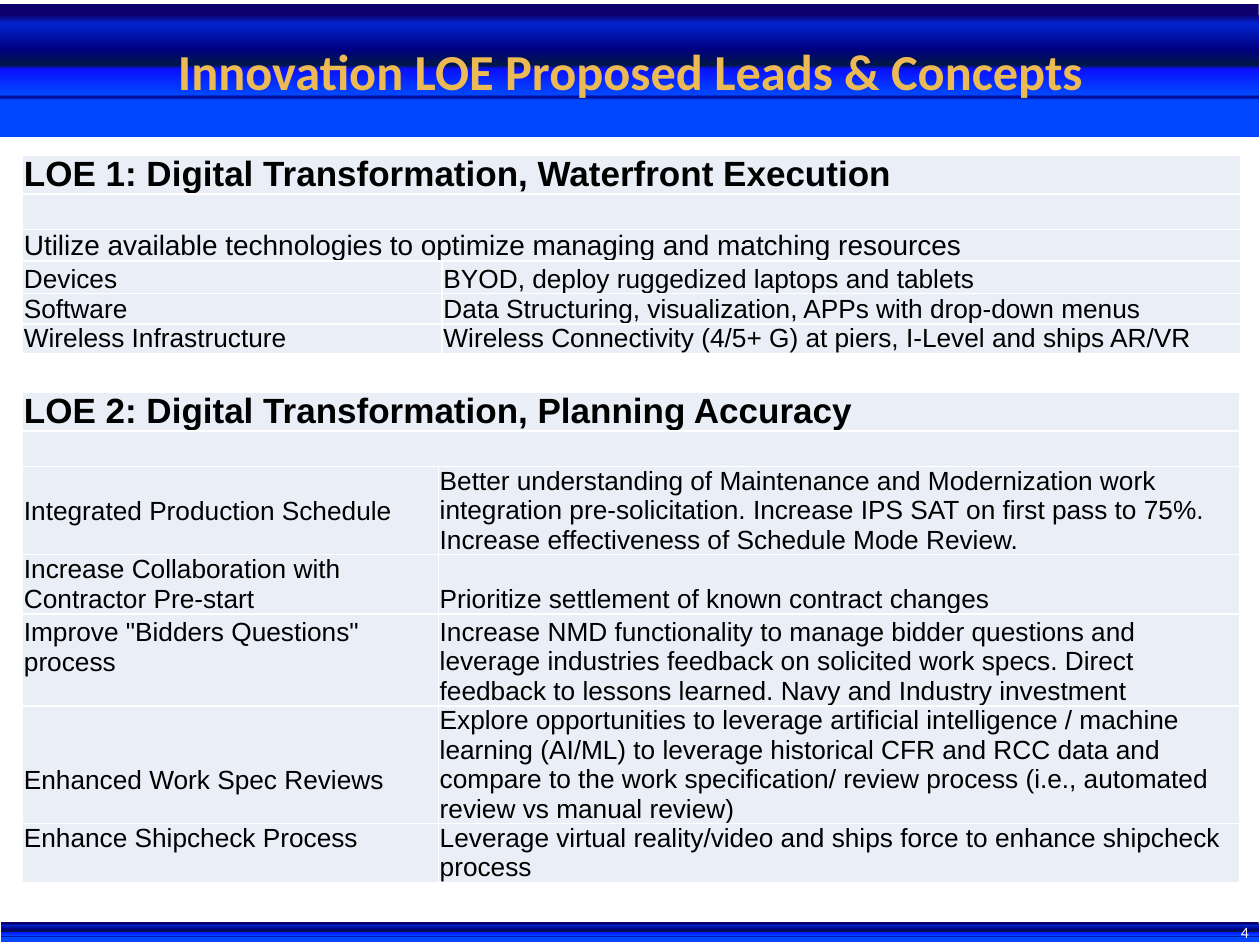
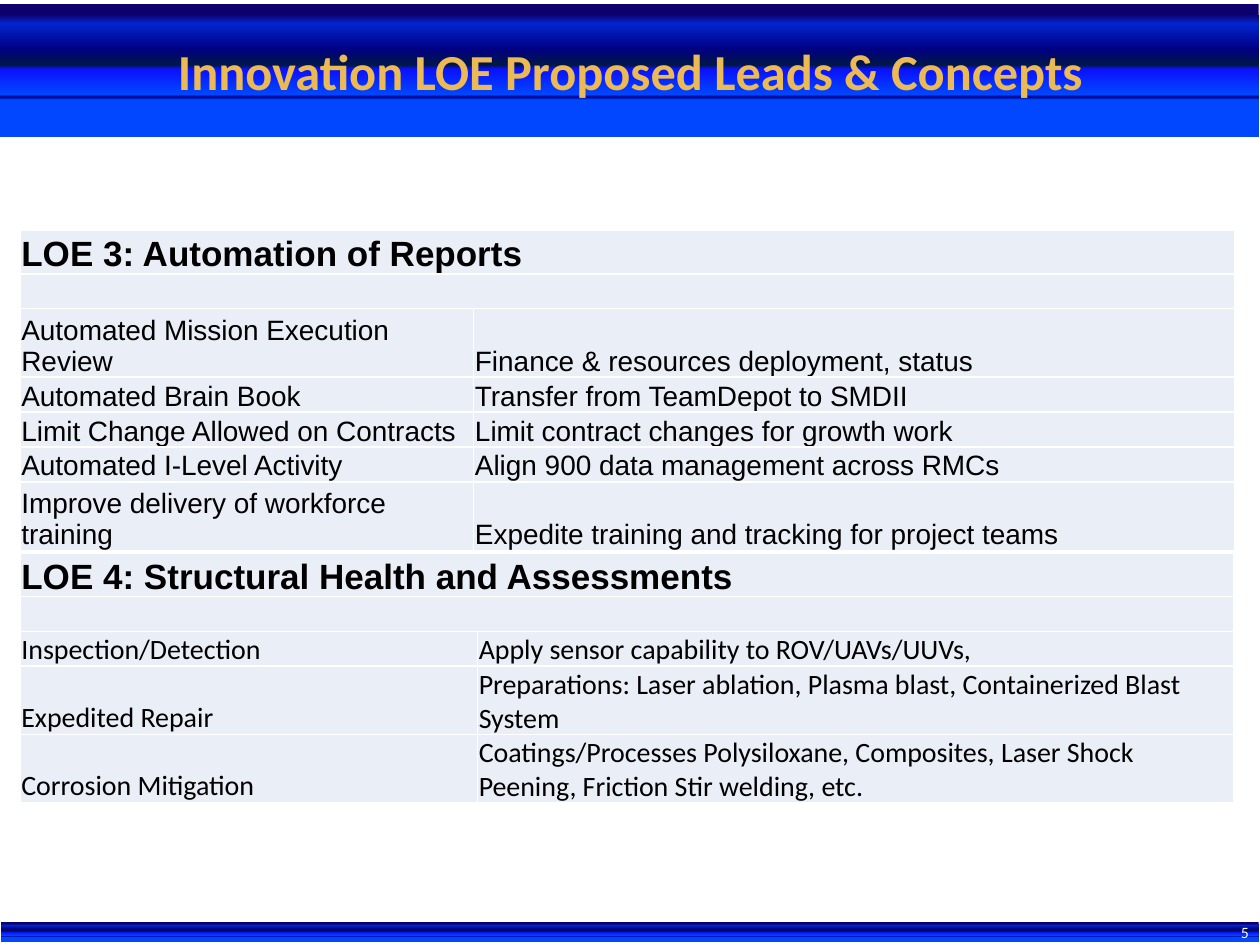
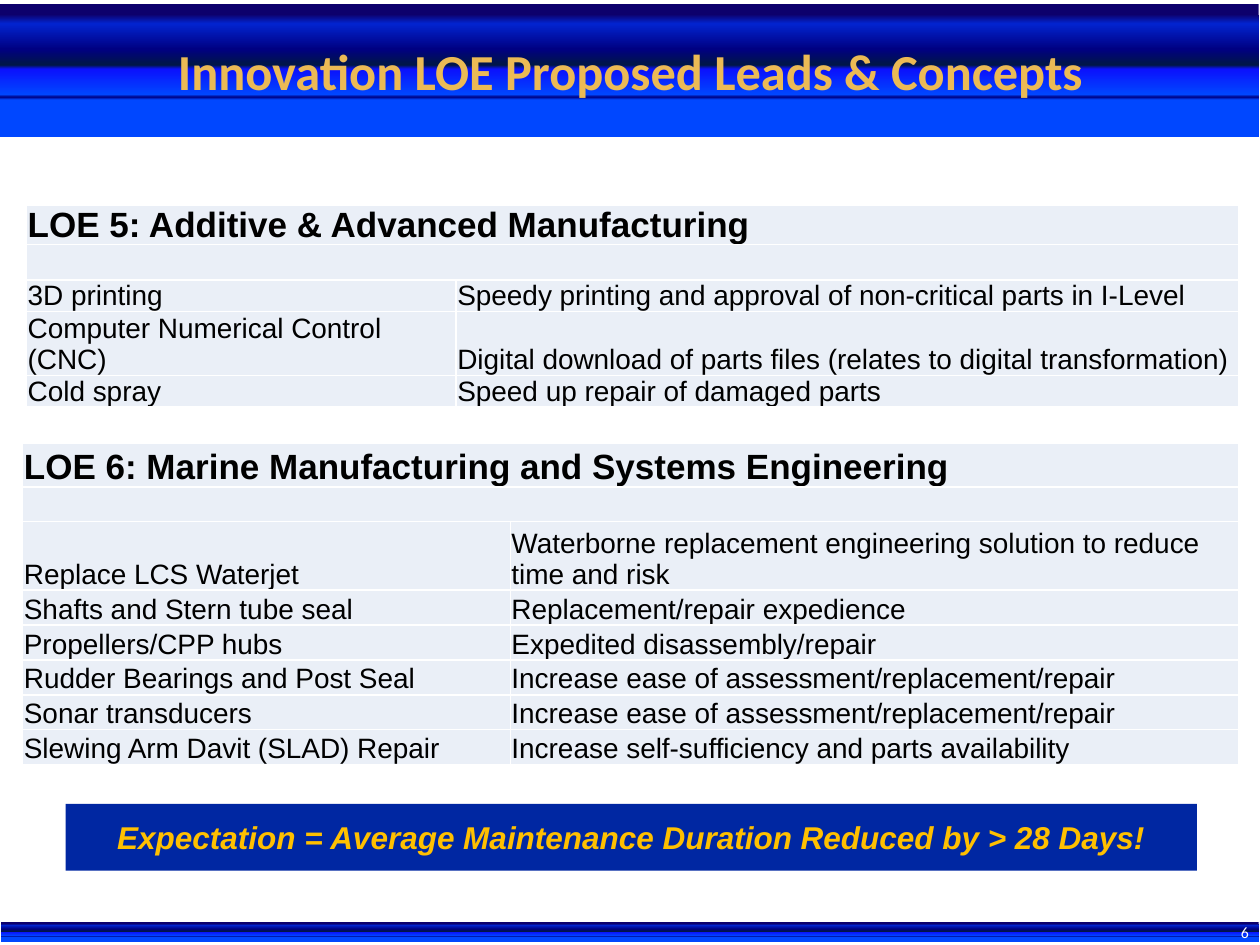
from dataclasses import dataclass

from pptx import Presentation
from pptx.dml.color import RGBColor
from pptx.enum.shapes import MSO_SHAPE as Shape
from pptx.enum.text import MSO_ANCHOR as Anchor, PP_ALIGN as Align
from pptx.oxml import parse_xml
from pptx.oxml.ns import nsdecls, qn
from pptx.util import Inches, Pt

# Shared look
WHITE = RGBColor(0xFF, 0xFF, 0xFF)
BLACK = RGBColor(0x00, 0x00, 0x00)
TITLE_GOLD = RGBColor(0xEB, 0xBA, 0x55)
CALLOUT_GOLD = RGBColor(0xFF, 0xC0, 0x00)
CALLOUT_BLUE = RGBColor(0x00, 0x27, 0xA2)
CELL_FILL = RGBColor(0xEA, 0xEF, 0xF7)
BAND_STOPS = [
    (8, RGBColor(0x0D, 0x00, 0x6C)),
    (15, RGBColor(0x02, 0x24, 0xD0)),
    (34, RGBColor(0x00, 0x00, 0x82)),
    (46, RGBColor(0x00, 0x17, 0x46)),
    (49, RGBColor(0x0B, 0x11, 0xFD)),
    (68, RGBColor(0x00, 0x47, 0xFF)),
    (70, RGBColor(0x00, 0x00, 0x82)),
    (72, RGBColor(0x00, 0x47, 0xFF)),
]
TITLE = "Innovation LOE Proposed Leads & Concepts"
FIRST_PAGE = 4
COMPACT_PITCH = 1.12  # line pitch of compact tables, in font sizes


@dataclass(frozen=True)
class Box:
    left: float
    top: float
    width: float
    height: float

    def lengths(self) -> list:
        return [Inches(v) for v in (self.left, self.top, self.width, self.height)]


@dataclass(frozen=True)
class Style:
    size: float
    color: RGBColor = BLACK
    name: str = "Arial"
    bold: bool = False
    italic: bool = False


@dataclass(frozen=True)
class Row:
    height: float
    lead: str
    concept: str = ""  # without a concept the lead spans both columns
    size: float = 16
    lead_lift: float = 0  # space below the lead text


@dataclass(frozen=True)
class Effort:
    heading: str
    left: float
    top: float
    columns: tuple
    heading_height: float
    spacer_height: float
    rows: list
    font: str = "Arial"
    compact: bool = False


HEADER_BAND = Box(-0.01, 0.03, 10, 1.06)
FOOTER_BAND = Box(0.01, 7.32, 9.98, 0.16)
TITLE_BOX = Box(1.06, 0.09, 7.89, 0.93)
NUMBER_BOX = Box(9.45, 7.27, 0.56, 0.25)
CALLOUT_BOX = Box(0.52, 6.38, 8.98, 0.53)

TITLE_STYLE = Style(28.8, TITLE_GOLD, "Calibri", bold=True)
NUMBER_STYLE = Style(9, WHITE, "Calibri")
CALLOUT_STYLE = Style(18, CALLOUT_GOLD, bold=True, italic=True)

# Lines of effort, grouped by slide
PAGES = [
    [
        Effort("LOE 1: Digital Transformation, Waterfront Execution",
               0.18, 1.23, (3.33, 6.34), 0.31, 0.28, [
                   Row(0.25, "Utilize available technologies to optimize managing and "
                       "matching resources"),
                   Row(0.26, "Devices", "BYOD, deploy ruggedized laptops and tablets", 15),
                   Row(0.24, "Software",
                       "Data Structuring, visualization, APPs with drop-down menus", 15),
                   Row(0.23, "Wireless Infrastructure",
                       "Wireless Connectivity (4/5+ G) at piers, I-Level and ships AR/VR", 15),
               ], compact=True),
        Effort("LOE 2: Digital Transformation, Planning Accuracy",
               0.18, 3.11, (3.3, 6.36), 0.31, 0.28, [
                   Row(0.7, "Integrated Production Schedule",
                       "Better understanding of Maintenance and Modernization work "
                       "integration pre-solicitation. Increase IPS SAT on first pass to 75%. "
                       "Increase effectiveness of Schedule Mode Review.", 15, 0.23),
                   Row(0.47, "Increase Collaboration with Contractor Pre-start",
                       "Prioritize settlement of known contract changes", 15),
                   Row(0.73, 'Improve "Bidders Questions" process',
                       "Increase NMD functionality to manage bidder questions and leverage "
                       "industries feedback on solicited work specs. Direct feedback to "
                       "lessons learned. Navy and Industry investment", 15, 0.23),
                   Row(0.93, "Enhanced Work Spec Reviews",
                       "Explore opportunities to leverage artificial intelligence / machine "
                       "learning (AI/ML) to leverage historical CFR and RCC data and compare "
                       "to the work specification/ review process (i.e., automated review vs "
                       "manual review)", 15, 0.23),
                   Row(0.46, "Enhance Shipcheck Process",
                       "Leverage virtual reality/video and ships force to enhance shipcheck "
                       "process", 15, 0.23),
               ], compact=True),
    ],
    [
        Effort("LOE 3: Automation of Reports",
               0.16, 1.83, (3.6, 6.04), 0.34, 0.27, [
                   Row(0.54, "Automated Mission Execution Review",
                       "Finance & resources deployment, status"),
                   Row(0.27, "Automated Brain Book", "Transfer from TeamDepot to SMDII"),
                   Row(0.27, "Limit Change Allowed on Contracts",
                       "Limit contract changes for growth work"),
                   Row(0.27, "Automated I-Level Activity",
                       "Align 900 data management across RMCs"),
                   Row(0.54, "Improve delivery of workforce training",
                       "Expedite training and tracking for project teams"),
               ]),
        Effort("LOE 4: Structural Health and Assessments",
               0.16, 4.39, (3.63, 6), 0.34, 0.27, [
                   Row(0.27, "Inspection/Detection",
                       "Apply sensor capability to ROV/UAVs/UUVs,"),
                   Row(0.54, "Expedited Repair",
                       "Preparations: Laser ablation, Plasma blast, Containerized Blast System"),
                   Row(0.54, "Corrosion Mitigation",
                       "Coatings/Processes Polysiloxane, Composites, Laser Shock Peening, "
                       "Friction Stir welding, etc."),
               ], "Calibri"),
    ],
    [
        Effort("LOE 5: Additive & Advanced Manufacturing",
               0.21, 1.63, (3.41, 6.21), 0.31, 0.28, [
                   Row(0.25, "3D printing",
                       "Speedy printing and approval of non-critical parts in I-Level"),
                   Row(0.51, "Computer Numerical Control (CNC)",
                       "Digital download of parts files (relates to digital transformation)"),
                   Row(0.24, "Cold spray", "Speed up repair of damaged parts"),
               ], compact=True),
        Effort("LOE 6: Marine Manufacturing and Systems Engineering",
               0.18, 3.52, (3.87, 5.78), 0.34, 0.27, [
                   Row(0.54, "Replace LCS Waterjet",
                       "Waterborne replacement engineering solution to reduce time and risk"),
                   Row(0.27, "Shafts and Stern tube seal", "Replacement/repair expedience"),
                   Row(0.27, "Propellers/CPP hubs", "Expedited disassembly/repair"),
                   Row(0.27, "Rudder Bearings and Post Seal",
                       "Increase ease of assessment/replacement/repair"),
                   Row(0.27, "Sonar transducers",
                       "Increase ease of assessment/replacement/repair"),
                   Row(0.27, "Slewing Arm Davit (SLAD) Repair",
                       "Increase self-sufficiency and parts availability"),
               ]),
    ],
]


def write(frame, text: str, style: Style, align=Align.LEFT) -> None:
    para = frame.paragraphs[0]
    para.alignment = align
    font = para.font
    font.size, font.name = Pt(style.size), style.name
    font.bold, font.italic = style.bold, style.italic
    font.color.rgb = style.color
    if text:
        para.add_run().text = text


def add_text(page, box: Box, text: str, style: Style, align) -> None:
    frame = page.shapes.add_textbox(*box.lengths()).text_frame
    frame.word_wrap = True
    frame.vertical_anchor = Anchor.MIDDLE
    write(frame, text, style, align)


def add_rectangle(page, box: Box):
    shape = page.shapes.add_shape(Shape.RECTANGLE, *box.lengths())
    shape.shadow.inherit = False
    shape.line.fill.background()
    return shape


def add_band(page, box: Box) -> None:
    band = add_rectangle(page, box)
    band.fill.gradient()
    band.fill.gradient_angle = 270
    stops = band.element.spPr.find(qn("a:gradFill")).find(qn("a:gsLst"))
    for stop in list(stops):
        stops.remove(stop)
    for percent, color in BAND_STOPS:
        stops.append(parse_xml(
            f'<a:gs {nsdecls("a")} pos="{percent * 1000}"><a:srgbClr val="{color}"/></a:gs>'))


def format_cell(cell, text: str, style: Style, compact: bool, lift: float = 0) -> None:
    cell.margin_left = cell.margin_right = Inches(0.01)
    cell.margin_top = Inches(0 if compact else 0.01)
    cell.margin_bottom = Inches(lift)
    cell.vertical_anchor = Anchor.BOTTOM
    properties = cell._tc.get_or_add_tcPr()
    for side in ("lnL", "lnR", "lnT", "lnB"):
        properties.append(parse_xml(
            f'<a:{side} {nsdecls("a")} w="{Pt(1)}"><a:solidFill>'
            f'<a:srgbClr val="{WHITE}"/></a:solidFill></a:{side}>'))
    cell.fill.solid()
    cell.fill.fore_color.rgb = CELL_FILL
    if compact:
        cell.text_frame.paragraphs[0].line_spacing = Pt(style.size * COMPACT_PITCH)
    write(cell.text_frame, text, style)


def add_effort(page, effort: Effort) -> None:
    rows = [Row(effort.heading_height, effort.heading, size=20),
            Row(effort.spacer_height, ""), *effort.rows]
    box = Box(effort.left, effort.top, sum(effort.columns), sum(r.height for r in rows))
    table = page.shapes.add_table(len(rows), 2, *box.lengths()).table
    table.first_row = table.horz_banding = False
    for column, width in zip(table.columns, effort.columns):
        column.width = Inches(width)
    for index, row in enumerate(rows):
        table.rows[index].height = Inches(row.height)
        style = Style(row.size, name=effort.font)
        if index == 0:
            style = Style(row.size, bold=True)
        lead, concept = table.cell(index, 0), table.cell(index, 1)
        format_cell(lead, row.lead, style, effort.compact, row.lead_lift)
        format_cell(concept, row.concept, style, effort.compact)
        if not row.concept:
            lead.merge(concept)


def add_callout(page, text: str) -> None:
    callout = add_rectangle(page, CALLOUT_BOX)
    callout.fill.solid()
    callout.fill.fore_color.rgb = CALLOUT_BLUE
    frame = callout.text_frame
    frame.word_wrap = False
    frame.vertical_anchor = Anchor.MIDDLE
    write(frame, text, CALLOUT_STYLE, Align.CENTER)


def add_page(deck, number: int, efforts: list):
    page = deck.slides.add_slide(deck.slide_layouts[6])
    add_band(page, HEADER_BAND)
    add_band(page, FOOTER_BAND)
    add_text(page, NUMBER_BOX, str(number), NUMBER_STYLE, Align.RIGHT)
    add_text(page, TITLE_BOX, TITLE, TITLE_STYLE, Align.CENTER)
    for effort in efforts:
        add_effort(page, effort)
    return page


def main() -> None:
    deck = Presentation()
    deck.slide_width, deck.slide_height = Inches(10), Inches(7.5)
    for number, efforts in enumerate(PAGES, FIRST_PAGE):
        page = add_page(deck, number, efforts)
    # Closing message on the last slide
    add_callout(page, "Expectation = Average Maintenance Duration Reduced by > 28 Days!")
    deck.save("out.pptx")


if __name__ == "__main__":
    main()
